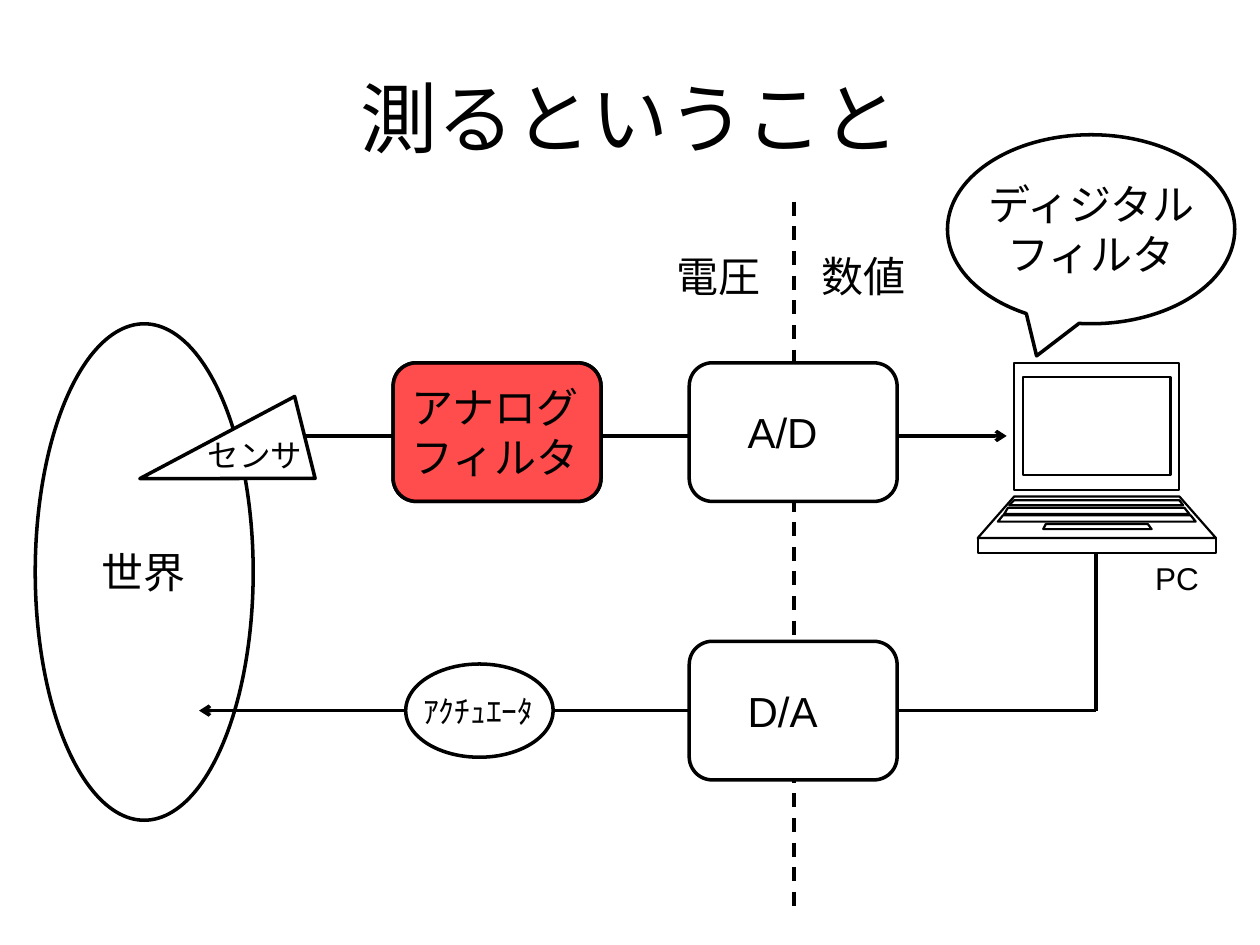
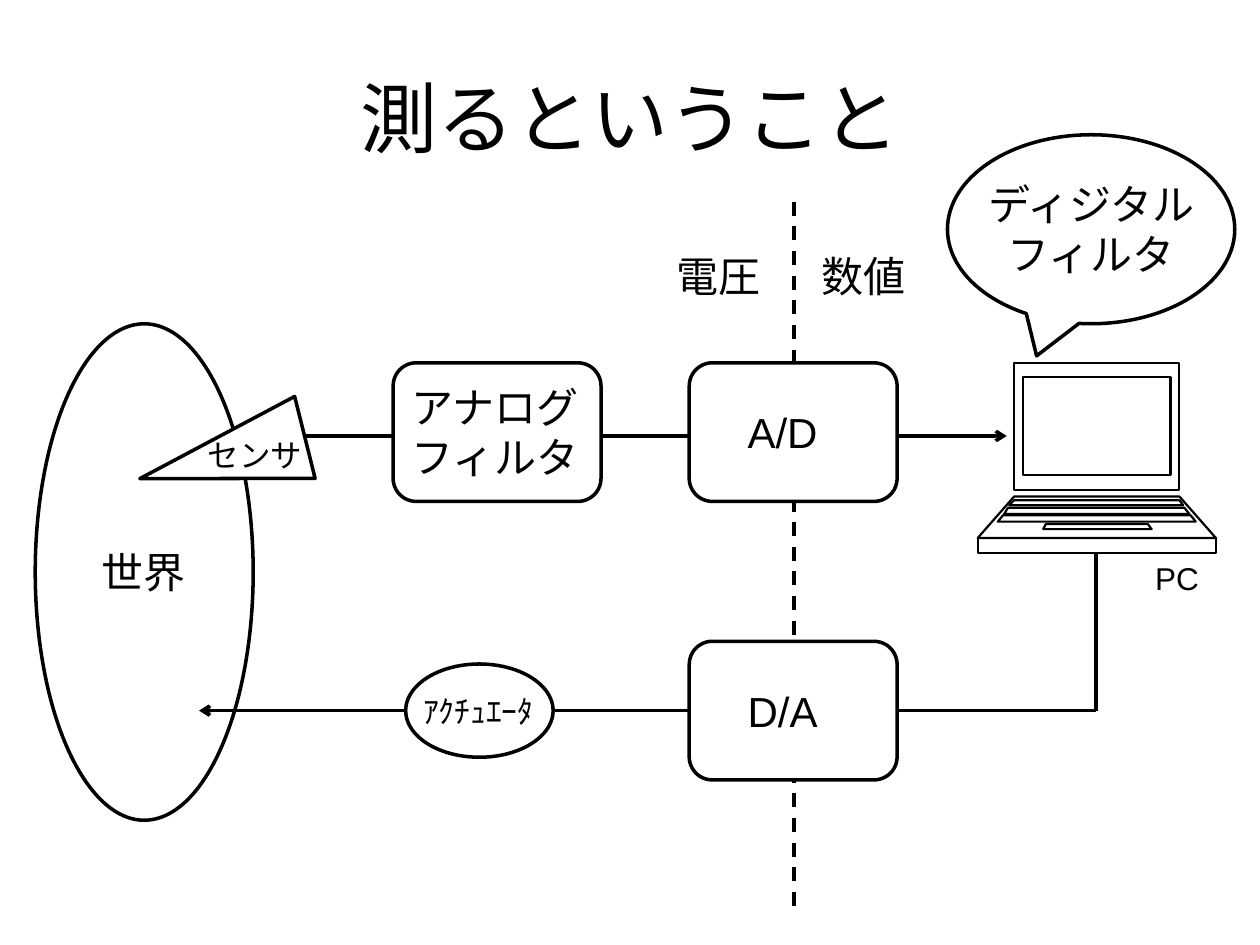
from typing import NamedTuple

from lxml.etree import SubElement
from pptx import Presentation
from pptx.dml.color import RGBColor
from pptx.enum.dml import MSO_LINE
from pptx.enum.shapes import MSO_CONNECTOR, MSO_SHAPE
from pptx.enum.text import MSO_ANCHOR, MSO_AUTO_SIZE, PP_ALIGN
from pptx.oxml.ns import qn
from pptx.util import Inches, Pt

SLIDE_WIDTH, SLIDE_HEIGHT = Inches(10), Inches(7.5)
COL, ROW = SLIDE_WIDTH // 100, SLIDE_HEIGHT // 75
INK, PAPER, ACCENT = "000000", "FFFFFF", "FF0000"
JAPANESE, LATIN = "Karla", "Arial"
TITLE_SIZE, LABEL_SIZE, SMALL_SIZE = 44, 24, 18
LABEL_FRAME = {"word_wrap": False, "auto_size": MSO_AUTO_SIZE.SHAPE_TO_FIT_TEXT}
TITLE_FRAME = {"word_wrap": True, "vertical_anchor": MSO_ANCHOR.MIDDLE}
LAPTOP_COLS, LAPTOP_ROWS = 189, 151
LAPTOP_PANELS = [
    ((29, 160, 0), (29, 160, 101)),
    ((29, 160, 106), (0, 189, 139)),
    ((0, 189, 139), (0, 189, 151)),
    ((36, 153, 11), (36, 153, 89)),
    ((29, 160, 109), (25, 163, 113)),
    ((54, 135, 128), (52, 138, 132)),
    ((24, 164, 115), (21, 168, 120)),
    ((20, 169, 121), (16, 173, 126)),
]


class Box(NamedTuple):
    """A region in columns and rows of the slide grid."""
    left: float
    top: float
    width: float
    height: float

    def inset(self, across, down, width, height):
        """Return a box offset from this one's top left corner."""
        return Box(self.left + across, self.top + down, width, height)

    def centred(self, width, height):
        """Return a box of the given size in the middle of this one."""
        return self.inset((self.width - width) / 2, (self.height - height) / 2, width, height)

    def lengths(self):
        """Return left, top, width and height as slide lengths."""
        return [round(value * unit) for value, unit in zip(self, (COL, ROW, COL, ROW))]


TITLE = Box(5, 3, 90, 12.5)
WORLD = Box(2.8, 25.7, 17.3, 39.4)
SENSOR = Box(14.3, 29.6, 65.6, 13.5)
DIVIDER = Box(52.7, 16, 20.6, 55.9)
FILTER = Box(31.2, 28.8, 16.5, 11)
AD = Box(54.7, 28.8, 16.5, 11)
DA = Box(54.7, 50.9, 16.5, 11)
LAPTOP = Box(77.6, 28.8, 18.9, 15.1)
CALLOUT = Box(75.2, 10.7, 22.8, 15)
RETURN_PATH = Box(15.8, 43.9, 71.2, 12.5)


def colour(code):
    """Turn a hex string into a colour."""
    return RGBColor.from_string(code)


def apply_format(target, values):
    """Set every attribute named in the values."""
    for name, value in values.items():
        setattr(target, name, value)


def outline(figure, weight=2):
    """Draw the figure's edge in ink."""
    figure.line.color.rgb = colour(INK)
    figure.line.width = Pt(weight)


def paint(figure, fill=PAPER, weight=2, opacity=None):
    """Give a figure its flat fill and edge."""
    figure.shadow.inherit = False
    figure.fill.solid()
    figure.fill.fore_color.rgb = colour(fill)
    if opacity:
        tone = figure._element.spPr.find(qn("a:solidFill"))[0]
        SubElement(tone, qn("a:alpha"), val=str(opacity * 1000))
    outline(figure, weight)


def add_block(region, preset, box, **look):
    """Add a painted preset shape."""
    block = region.add_shape(preset, *box.lengths())
    paint(block, **look)
    return block


def add_line(region, start, end, arrow=False, dashed=False):
    """Add a straight line between two grid points."""
    ends = [round(value * unit) for value, unit in zip(start + end, (COL, ROW, COL, ROW))]
    line = region.add_connector(MSO_CONNECTOR.STRAIGHT, *ends)
    outline(line)
    if dashed:
        line.line.dash_style = MSO_LINE.DASH
    if arrow:
        SubElement(line._element.spPr.find(qn("a:ln")), qn("a:tailEnd"), type="arrow")
    SubElement(line._element.spPr, qn("a:effectLst"))


def write(frame, lines, size, font, align):
    """Write one paragraph for each line."""
    frame.text = "\n".join(lines)
    for paragraph in frame.paragraphs:
        paragraph.alignment = align
        for run in paragraph.runs:
            apply_format(run.font, {"size": Pt(size), "name": font})
            run.font.color.rgb = colour(INK)


def add_label(region, box, *lines, size=LABEL_SIZE, font=JAPANESE, align=PP_ALIGN.LEFT):
    """Add an unwrapped text label."""
    frame = region.add_textbox(*box.lengths()).text_frame
    apply_format(frame, LABEL_FRAME)
    write(frame, lines, size, font, align)


def place_title(slide, box, wording):
    """Move and format the title placeholder."""
    title = slide.shapes.title
    apply_format(title, dict(zip(("left", "top", "width", "height"), box.lengths())))
    apply_format(title.text_frame, TITLE_FRAME)
    write(title.text_frame, [wording], TITLE_SIZE, JAPANESE, PP_ALIGN.CENTER)


def draw_world(region, box):
    """Draw the world that is measured."""
    add_block(region, MSO_SHAPE.OVAL, box)
    add_label(region, box.centred(8.8, 5), "世界")


def draw_sensor(region, box):
    """Draw the sensor and its signal line to the computer."""
    signal = box.top + 5
    add_line(region, (box.left + 9.7, signal), (box.left + box.width, signal), arrow=True)
    sensor = add_block(region, MSO_SHAPE.ISOSCELES_TRIANGLE, box.inset(0, 0, 6.7, 13.5))
    sensor.rotation = 256
    add_label(region, box.inset(1.2, 4.5, 9.6, 4), "センサ", size=SMALL_SIZE)


def draw_divider(region, box):
    """Draw the dashed border between voltage and number."""
    border = box.left + 10.3
    add_line(region, (border, box.top), (border, box.top + box.height), dashed=True)
    for across, wording in ((0, "電圧"), (11.5, "数値")):
        add_label(region, box.inset(across, 3.4, 8.8, 5), wording)


def draw_converter(region, box, wording):
    """Draw a converter block."""
    add_block(region, MSO_SHAPE.ROUNDED_RECTANGLE, box)
    add_label(region, box.centred(9.2, 5), wording, font=LATIN)


def draw_filter(region, box, highlighted):
    """Draw the analog filter, tinted when highlighted."""
    add_block(region, MSO_SHAPE.ROUNDED_RECTANGLE, box)
    if highlighted:
        add_block(region, MSO_SHAPE.ROUNDED_RECTANGLE, box, fill=ACCENT, opacity=70)
    add_label(region, box.centred(15.5, 9.1), "アナログ", "フィルタ", font=LATIN)


def draw_laptop(region, box):
    """Draw the computer from its panels."""
    left, top, width, height = box.lengths()
    pen = region.build_freeform(scale=(width / LAPTOP_COLS, height / LAPTOP_ROWS))
    for (upper_left, upper_right, upper), (lower_left, lower_right, lower) in LAPTOP_PANELS:
        pen.move_to(upper_left, upper)
        pen.add_line_segments(
            [(upper_right, upper), (lower_right, lower), (lower_left, lower)], close=True)
    paint(pen.convert_to_shape(left, top), weight=1.25)
    add_label(region, box.inset(13.1, 15.1, 5.8, 4), "PC", size=SMALL_SIZE, font=LATIN)


def draw_callout(region, box):
    """Draw the computer's speech balloon."""
    balloon = add_block(region, MSO_SHAPE.OVAL_CALLOUT, box)
    balloon.adjustments[0], balloon.adjustments[1] = -0.19, 0.67
    add_label(region, box.centred(18.8, 9.1), "ディジタル", "フィルタ",
              font=LATIN, align=PP_ALIGN.CENTER)


def draw_return_path(region, box):
    """Draw the way back to the world through the actuator."""
    right, bottom = box.left + box.width, box.top + box.height
    add_line(region, (right, box.top), (right, bottom))
    add_line(region, (right, bottom), (box.left, bottom), arrow=True)
    actuator = box.inset(16.4, box.height - 3.7, 11.7, 7.4)
    add_block(region, MSO_SHAPE.OVAL, actuator)
    add_label(region, actuator.centred(10.9, 4), "ｱｸﾁｭｴｰﾀ", size=SMALL_SIZE)


def build_slide(deck, highlighted):
    """Build the measuring loop on a title-only slide."""
    slide = deck.slides.add_slide(deck.slide_layouts[5])
    place_title(slide, TITLE, "測るということ")
    regions = [
        (draw_divider, DIVIDER),
        (draw_world, WORLD),
        (draw_sensor, SENSOR),
        (draw_laptop, LAPTOP),
        (draw_converter, AD, "A/D"),
        (draw_filter, FILTER, highlighted),
        (draw_callout, CALLOUT),
        (draw_return_path, RETURN_PATH),
        (draw_converter, DA, "D/A"),
    ]
    for draw, *details in regions:
        draw(slide.shapes.add_group_shape().shapes, *details)


def main():
    """Build and save the deck."""
    deck = Presentation()
    apply_format(deck, {"slide_width": SLIDE_WIDTH, "slide_height": SLIDE_HEIGHT})
    for highlighted in (True, False):
        build_slide(deck, highlighted)
    deck.save("out.pptx")


if __name__ == "__main__":
    main()
